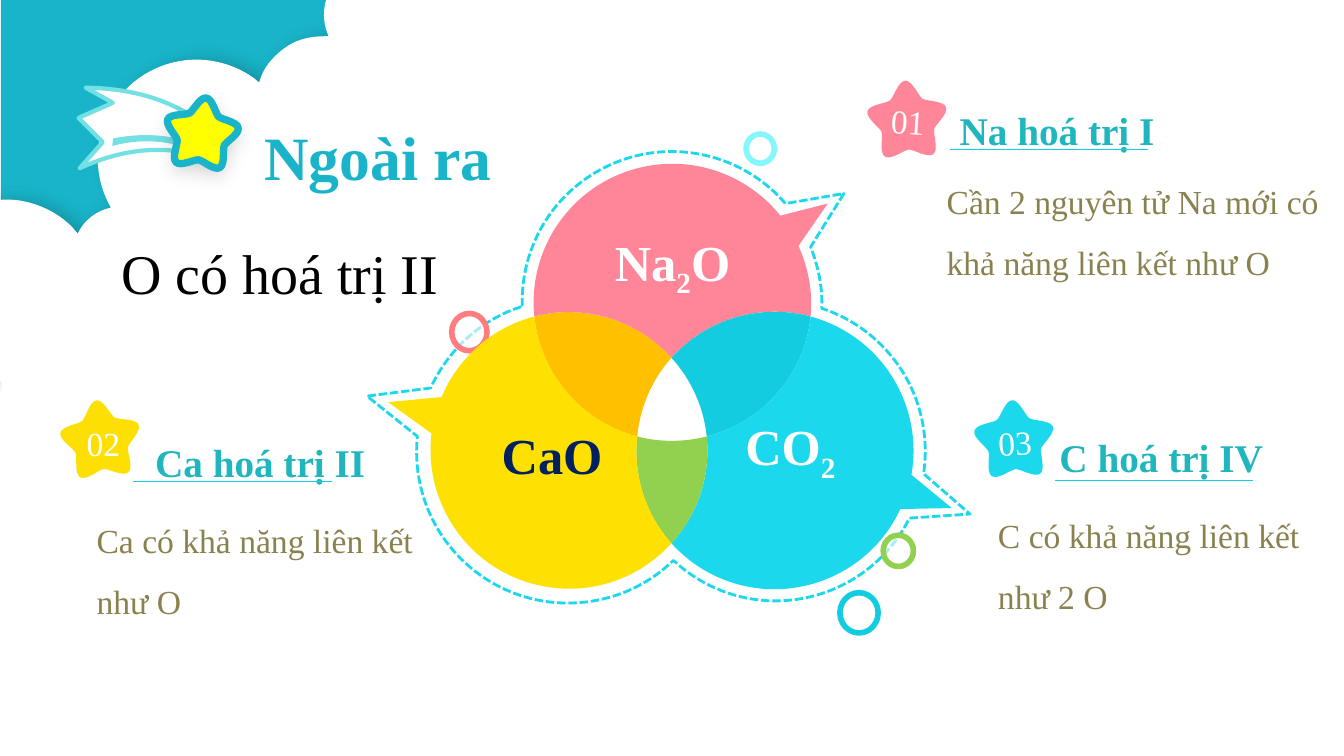
import math
import pptx
import pptx.dml.color
import pptx.enum.dml
import pptx.enum.shapes
import pptx.enum.text
import pptx.oxml.ns
import pptx.util
from lxml import etree

# The page is a grid of square cells, 13.33 columns by 7.5 rows
CELL = pptx.util.Inches(1)
COLUMNS, ROWS = 13.33, 7.5
FONT = "Times New Roman"
ALIGN = pptx.enum.text.PP_ALIGN
TEAL, PINK, YELLOW, CYAN = "19B4C9", "FF8599", "FEE002", "1CD8EC"
AQUA, LEAF, WHITE = "13CCDF", "92D050", "FFFFFF"


def cells(*lengths):
    return [round(length * CELL) for length in lengths]


def color(hex_code):
    return pptx.dml.color.RGBColor.from_string(hex_code)


def add_child(parent, tag, **attributes):
    child = etree.SubElement(parent, pptx.oxml.ns.qn(tag))
    for name, value in attributes.items():
        child.set(name, str(value))
    return child


# Closed outlines: lists of segments, (end,) for a line, (control, control, end) for a curve
def on_ring(center, radius, angle, handle=0):
    """Point at an angle, moved along the tangent by handle times the radius."""
    return (center[0] + radius * (math.cos(angle) - handle * math.sin(angle)),
            center[1] + radius * (math.sin(angle) + handle * math.cos(angle)))


def arc(center, start, end):
    """Curves along the shorter arc round center, at most 60 degrees each."""
    def polar(point):
        x, y = point[0] - center[0], point[1] - center[1]
        return math.atan2(y, x), math.hypot(x, y)
    (angle, radius), (last_angle, last_radius) = polar(start), polar(end)
    turn = (last_angle - angle + math.pi) % math.tau - math.pi
    count = math.ceil(abs(turn) / math.radians(60))
    turn, growth = turn / count, (last_radius - radius) / count
    handle = 4 / 3 * math.tan(turn / 4)
    for _ in range(count):
        yield (on_ring(center, radius, angle, handle),
               on_ring(center, radius + growth, angle + turn, -handle),
               on_ring(center, radius + growth, angle + turn))
        angle, radius = angle + turn, radius + growth


def arc_outline(corners):
    """Corners are (point, center of the arc to the next point, or None)."""
    segments = []
    for (point, center), (following, _) in zip(corners, corners[1:] + corners[:1]):
        segments += arc(center, point, following) if center else [(following,)]
    return segments


def star_outline(x, y, radius, lean):
    nodes = [(radius * (0.67 if index % 2 else 1), math.radians(36 * index + lean - 90))
             for index in range(11)]
    return [(on_ring((x, y), *start, 0.17), on_ring((x, y), *end, -0.17), on_ring((x, y), *end))
            for start, end in zip(nodes, nodes[1:])]


# Elements
def paint(shape, fill=None, line=None, width=1, opacity=None, shadow=None):
    shape.shadow.inherit = False
    if fill:
        shape.fill.solid()
        shape.fill.fore_color.rgb = color(fill)
    else:
        shape.fill.background()
    if line:
        shape.line.color.rgb = color(line)
        shape.line.width = pptx.util.Pt(width)
    else:
        shape.line.fill.background()
    properties = shape._element.spPr
    if opacity:
        hue = properties.find(pptx.oxml.ns.qn("a:solidFill"))[0]
        add_child(hue, "a:alpha", val=opacity * 1000)
    if shadow:
        alpha, blur, distance, direction = shadow
        effects = properties.find(pptx.oxml.ns.qn("a:effectLst"))
        cast = add_child(effects, "a:outerShdw", blurRad=blur * 12700, dist=distance * 12700,
                         dir=direction * 60000, algn="ctr", rotWithShape=0)
        add_child(add_child(cast, "a:srgbClr", val="000000"), "a:alpha", val=alpha * 1000)
    return shape


def add_outline(page, segments, **style):
    builder = page.shapes.build_freeform(*cells(*segments[-1][-1]))
    builder.add_line_segments([tuple(cells(*point)) for segment in segments for point in segment], close=True)
    shape = builder.convert_to_shape()
    # Join the three steps of each curve into one Bezier step
    steps = iter(list(shape._element.iter(pptx.oxml.ns.qn("a:lnTo"))))
    for segment in segments:
        parts = [next(steps) for _ in segment]
        if len(parts) == 3:
            curve = etree.Element(pptx.oxml.ns.qn("a:cubicBezTo"))
            parts[0].addprevious(curve)
            for part in parts:
                curve.append(part[0])
                part.getparent().remove(part)
    return paint(shape, **style)


def add_preset(page, kind, place, **style):
    return paint(page.shapes.add_shape(kind, *cells(*place)), **style)


def write(box, text, size, ink, bold=False, align=ALIGN.LEFT, spacing=None, wrap=True):
    """Write one paragraph; a part between underscores is a subscript."""
    frame = box.text_frame
    frame.word_wrap = wrap
    frame.vertical_anchor = pptx.enum.text.MSO_ANCHOR.TOP
    para = frame.paragraphs[0]
    para.alignment = align
    if spacing:
        para.line_spacing = spacing
    para.font.name, para.font.size, para.font.bold = FONT, pptx.util.Pt(size), bold
    para.font.color.rgb = color(ink)
    for index, part in enumerate(text.split("_")):
        if part:
            span = para.add_run()
            span.text = part
            if index % 2:
                span.font._element.set("baseline", "-25000")


def add_text(page, place, *content, turn=0, **style):
    box = page.shapes.add_textbox(*cells(*place))
    box.rotation = turn
    write(box, *content, **style)


def add_rule(page, x, y):
    rule = page.shapes.add_connector(pptx.enum.shapes.MSO_CONNECTOR.STRAIGHT, *cells(x, y, x + 1.97, y))
    rule.line.color.rgb = color("13CFE3")
    rule.line.width = pptx.util.Pt(0.5)
    add_child(rule._element.spPr, "a:effectLst")


# Parts of the slide
def add_cloud_corner(page):
    add_preset(page, pptx.enum.shapes.MSO_SHAPE.RECTANGLE, (0.01, -0.01, 3.86, 3.03), fill=TEAL)
    low, small, big, high, top = (0.06, 2.9), (1.21, 2.53), (1.96, 1.58), (3.23, 1.02), (3.73, 0.16)
    cloud = arc_outline([
        ((3.3, -0.11), top), ((3.27, 0.37), None), ((3.23, 0.37), high), ((2.6, 0.77), None),
        ((2.58, 0.83), None), ((2.52, 0.78), big), ((1.11, 2.07), small), ((0.78, 2.33), None),
        ((0.72, 2.26), low), ((-0.19, 2.03), None), ((-0.19, 3.75), low), ((0.99, 2.92), small),
        ((1.7, 2.52), big), ((2.96, 1.62), high), ((3.82, 0.7), top), ((4.32, -0.11), None)])
    shade = [tuple((x - 0.01, y - 0.01) for x, y in segment) for segment in cloud]
    add_outline(page, shade, fill=WHITE, shadow=(19, 13, 7, 0))
    add_outline(page, cloud, fill=WHITE)
    stairs = [(5.01, 0), (3.7, 0), (3.7, 1.39), (2.64, 1.39), (2.64, 1.89), (2.18, 1.89), (2.18, 2.37),
              (1.64, 2.37), (1.64, 2.74), (0.78, 2.74), (0.78, 3), (0.02, 3), (0.02, 4.8), (2.17, 4.8),
              (2.17, 3.68), (3.16, 3.68), (3.16, 3.14), (4.31, 3.14), (4.31, 2.21), (5.01, 2.21)]
    add_outline(page, [(point,) for point in stairs], fill=WHITE)


def add_dashed_border(page):
    upper, left, right = (6.66, 2.99), (5.63, 4.48), (7.69, 4.48)
    border = add_outline(page, arc_outline([
        ((5.18, 3.04), upper), ((7.79, 2.02), None), ((8.37, 1.92), None), ((8.04, 2.45), upper),
        ((8.15, 3.06), right), ((9.16, 4.7), None), ((9.62, 5.1), None), ((9.02, 5.14), right),
        ((6.68, 5.56), None), ((6.59, 5.64), left), ((4.14, 4.33), None), ((3.64, 3.93), None),
        ((4.27, 3.85), left)]), line=CYAN, width=2)
    border.line.dash_style = pptx.enum.dml.MSO_LINE.SQUARE_DOT


def venn_pieces():
    """Outlines of the three overlapping speech bubbles, by piece."""
    sodium, calcium, carbon = (6.67, 3), (5.65, 4.47), (7.68, 4.47)
    top, bottom = (6.66, 3.55), (6.66, 5.39)
    outer_left, outer_right = (5.3, 3.14), (8.04, 3.14)
    inner_left, inner_right = (6.32, 4.33), (7.01, 4.33)
    pieces = {
        "middle": [(inner_left, carbon), (top, calcium), (inner_right, sodium)],
        "orange": [(outer_left, calcium), (top, carbon), (inner_left, sodium)],
        "sodium": [(outer_left, sodium), ((7.74, 2.14), None), ((8.21, 2.02), None),
                   ((7.92, 2.44), sodium), (outer_right, carbon), (top, calcium)],
        "aqua": [(top, carbon), (outer_right, sodium), (inner_right, calcium)],
        "carbon": [(outer_right, carbon), ((9.04, 4.71), None), ((9.44, 5.04), None),
                   ((8.93, 5.05), carbon), (bottom, calcium), (inner_right, sodium)],
        "green": [(inner_left, sodium), (inner_right, calcium), (bottom, carbon)],
        "calcium": [(outer_left, sodium), (inner_left, carbon), (bottom, calcium),
                    ((4.28, 4.3), None), ((3.85, 3.99), None), ((4.38, 3.94), calcium)]}
    return {name: arc_outline(corners) for name, corners in pieces.items()}


def add_shooting_star(page):
    tail = [((2.06, 1.57),), ((1.74, 1.46), (1.31, 1.43), (0.79, 1.67)), ((1.02, 1.41),),
            ((0.78, 1.17),), ((1.12, 1.02),), ((0.85, 0.87),), ((1.45, 0.88), (1.81, 1.06), (2.12, 1.3))]
    add_outline(page, tail, fill=WHITE, line="73E0E3", width=3)
    streak = [((1.86, 1.46),), ((1.67, 1.4), (1.41, 1.36), (1.12, 1.44)),
              ((1.13, 1.38),), ((1.42, 1.32), (1.67, 1.35), (1.87, 1.41))]
    add_outline(page, streak, fill="73E0E3", line="73E0E3")
    star = star_outline(2, 1.34, 0.37, 7)
    add_outline(page, star, fill="C4EF39", shadow=(20, 15, 5, 90))
    add_outline(page, star, fill="FFFF00", line=TEAL, width=5.25)


def main():
    deck = pptx.Presentation()
    deck.slide_width, deck.slide_height = cells(COLUMNS, ROWS)
    page = deck.slides.add_slide(deck.slide_layouts[5])
    add_cloud_corner(page)
    add_dashed_border(page)

    # Title, lifted above the cloud
    title = page.shapes.title
    title.left, title.top, title.width, title.height = cells(2.52, 1.13, 2.83, 0.84)
    write(title, "Ngoài ra", 44, TEAL, bold=True, align=ALIGN.JUSTIFY)
    title._element.getparent().append(title._element)

    # Back pieces of the bubbles
    pieces = venn_pieces()
    for name, fill in [("middle", WHITE), ("orange", "FFC000"), ("sodium", PINK),
                       ("aqua", AQUA), ("carbon", CYAN)]:
        add_outline(page, pieces[name], fill=fill)

    # Numbered stars
    for number, x, y, lean, fill, place, turn in [
            ("01", 9, 1.21, -3, PINK, (8.74, 0.96, 0.82, 0.5), 3.5),
            ("02", 1, 4.38, -6, "FDDF03", (0.76, 4.15, 0.85, 0.5), 0),
            ("03", 10.06, 4.38, -3, CYAN, (9.8, 4.13, 0.82, 0.5), 357)]:
        add_outline(page, star_outline(x, y, 0.41, lean), fill=fill)
        add_text(page, place, number, 24, WHITE, turn=turn)

    # Valence notes: text, heading and rule
    for text, place, heading, heading_place, rule in [
            ("Ca có khả năng liên kết như O", (0.86, 4.91, 3.5, 1.31),
             "Ca hoá trị II", (1.44, 4.3, 2.51, 0.57), (1.32, 4.78)),
            ("Cần 2 nguyên tử Na mới có khả năng liên kết như O", (9.29, 1.55, 3.91, 1.31),
             "Na hoá trị I", (9.42, 1.01, 2.61, 0.57), (9.42, 1.48)),
            ("C có khả năng liên kết như 2 O", (9.8, 4.86, 3.53, 1.31),
             "C hoá trị IV", (10.41, 4.25, 2.47, 0.57), (10.46, 4.77))]:
        add_text(page, place, text, 24, "89814E", spacing=1.5)
        add_text(page, heading_place, heading, 28, "20B6BE", bold=True)
        add_rule(page, *rule)
    add_text(page, (0.76, 1.98, 4.03, 0.99), "O có hoá trị II", 40, "000000",
             align=ALIGN.CENTER, spacing=1.5)

    # Rings
    for place, line in [((4.48, 3.11, 0.35, 0.37), "FF7C80"), ((8.76, 5.31, 0.3, 0.31), LEAF),
                        ((8.33, 5.88, 0.38, 0.4), AQUA), ((7.4, 1.33, 0.28, 0.29), "84F6FC")]:
        add_preset(page, pptx.enum.shapes.MSO_SHAPE.OVAL, place, fill=WHITE, line=line, width=4, opacity=60)
    add_shooting_star(page)

    # Front pieces of the bubbles and the formulas
    add_outline(page, pieces["green"], fill=LEAF)
    add_outline(page, pieces["calcium"], fill=YELLOW)
    for formula, place, ink in [("Na_2_O", (5.98, 2.24, 1.38, 0.71), WHITE),
                                ("CaO", (4.85, 4.16, 1.25, 0.71), "002060"),
                                ("CO_2_", (7.26, 4.07, 1.16, 0.71), WHITE)]:
        add_text(page, place, formula, 36, ink, bold=True, align=ALIGN.CENTER, wrap=False)
    deck.save("out.pptx")


if __name__ == "__main__":
    main()
